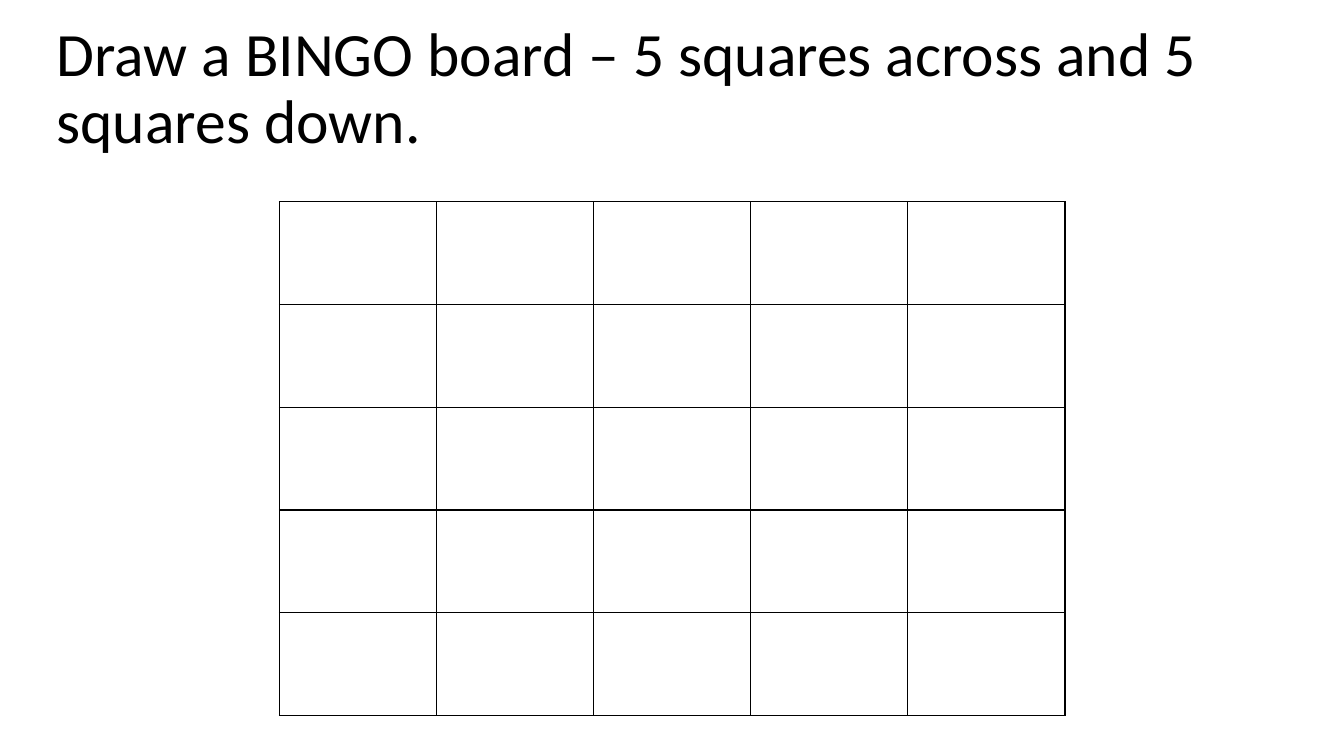
"""Build a slide that shows an empty five by five bingo board."""
from dataclasses import dataclass

import pptx
import pptx.dml.color
import pptx.enum.text
import pptx.oxml
import pptx.oxml.ns
import pptx.slide
import pptx.table
import pptx.util
from pptx.util import Cm

COLOURS = {"ink": "000000", "paper": "FFFFFF"}
HEADING = "Draw a BINGO board – 5 squares across and 5 squares down."
HEADING_PLACE = {"left": Cm(1.17), "top": Cm(0.43), "width": Cm(31.78), "height": Cm(3.68)}
HEADING_FRAME = {
    "word_wrap": True,
    "auto_size": pptx.enum.text.MSO_AUTO_SIZE.NONE,
    "vertical_anchor": pptx.enum.text.MSO_ANCHOR.MIDDLE,
}
HEADING_PARAGRAPH = {"alignment": pptx.enum.text.PP_ALIGN.LEFT, "line_spacing": 0.9}
HEADING_FONT = {"name": "Calibri", "size": pptx.util.Pt(44)}
BOARD_STYLE = {"first_row": False, "horz_banding": False}


@dataclass(frozen=True)
class Board:
    left: float
    top: float
    square_width: float
    square_height: float
    squares: int


@dataclass(frozen=True)
class Edge:
    tag: str
    points: float = 1


BINGO = Board(left=7.04, top=5.08, square_width=3.96, square_height=2.59, squares=5)
EDGES = [Edge("lnL"), Edge("lnR"), Edge("lnT"), Edge("lnB")]


def apply(target: object, values: dict) -> None:
    """Set every named attribute of the target."""
    for attribute, value in values.items():
        setattr(target, attribute, value)


def rgb(colour: str) -> pptx.dml.color.RGBColor:
    """Look up a colour by its name."""
    return pptx.dml.color.RGBColor.from_string(COLOURS[colour])


def draw_edge(square: pptx.table._Cell, edge: Edge) -> None:
    """Rule one side of a square."""
    square._tc.get_or_add_tcPr().append(pptx.oxml.parse_xml(
        f'<a:{edge.tag} {pptx.oxml.ns.nsdecls("a")} w="{pptx.util.Pt(edge.points)}">'
        f'<a:solidFill><a:srgbClr val="{COLOURS["ink"]}"/></a:solidFill></a:{edge.tag}>'
    ))


def draw_heading(slide: pptx.slide.Slide) -> None:
    """Place and format the slide title."""
    heading = slide.shapes.title
    apply(heading, HEADING_PLACE)
    heading.text_frame.text = HEADING
    apply(heading.text_frame, HEADING_FRAME)
    instruction = heading.text_frame.paragraphs[0]
    apply(instruction, HEADING_PARAGRAPH)
    apply(instruction.runs[0].font, HEADING_FONT)
    instruction.runs[0].font.color.rgb = rgb("ink")


def draw_board(slide: pptx.slide.Slide, board: Board) -> None:
    """Draw the grid of empty squares."""
    grid = slide.shapes.add_table(
        board.squares, board.squares, Cm(board.left), Cm(board.top),
        Cm(board.square_width * board.squares), Cm(board.square_height * board.squares),
    ).table
    apply(grid, BOARD_STYLE)
    for square in grid.iter_cells():
        for edge in EDGES:
            draw_edge(square, edge)
        square.fill.background()


def main() -> None:
    """Create and save the presentation."""
    presentation = pptx.Presentation()
    apply(presentation, {"slide_width": Cm(33.87), "slide_height": Cm(19.05)})
    slide = presentation.slides.add_slide(presentation.slide_layouts.get_by_name("Title Only"))
    slide.background.fill.solid()
    slide.background.fill.fore_color.rgb = rgb("paper")
    draw_heading(slide)
    draw_board(slide, BINGO)
    presentation.save("out.pptx")


if __name__ == "__main__":
    main()
